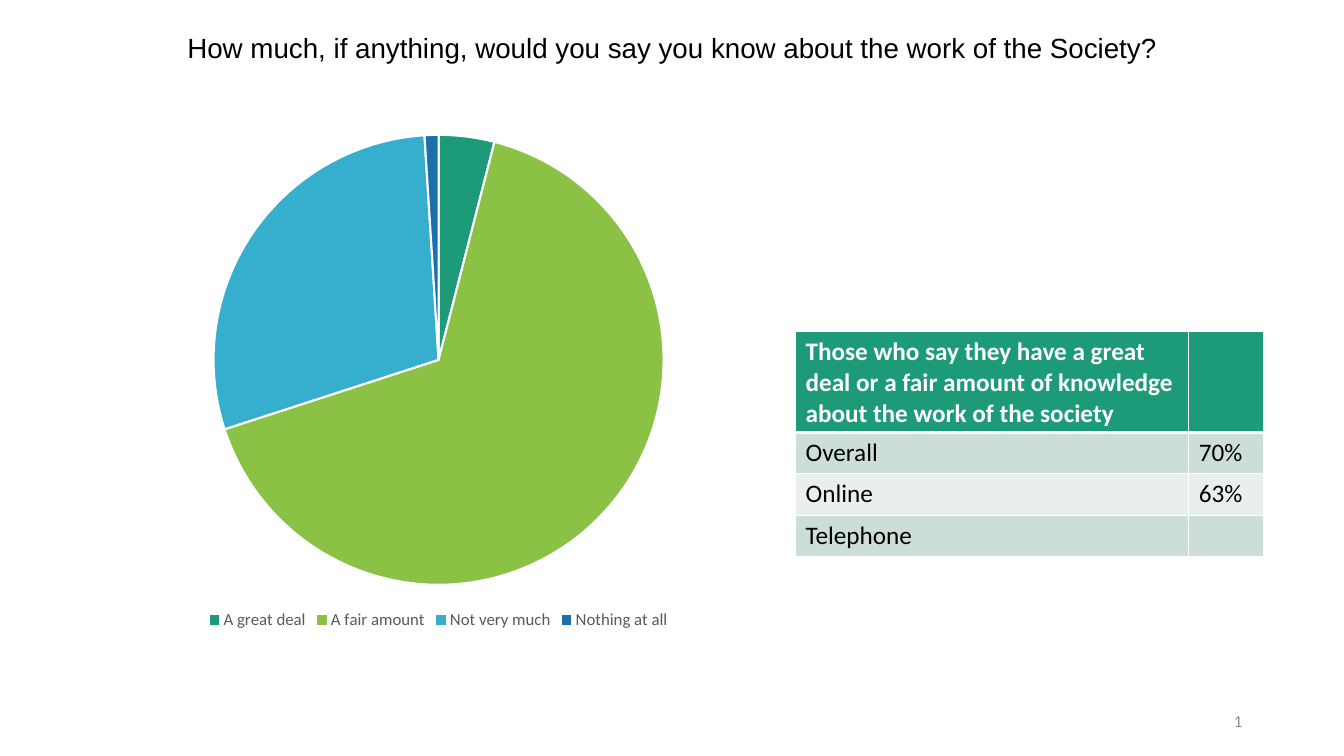
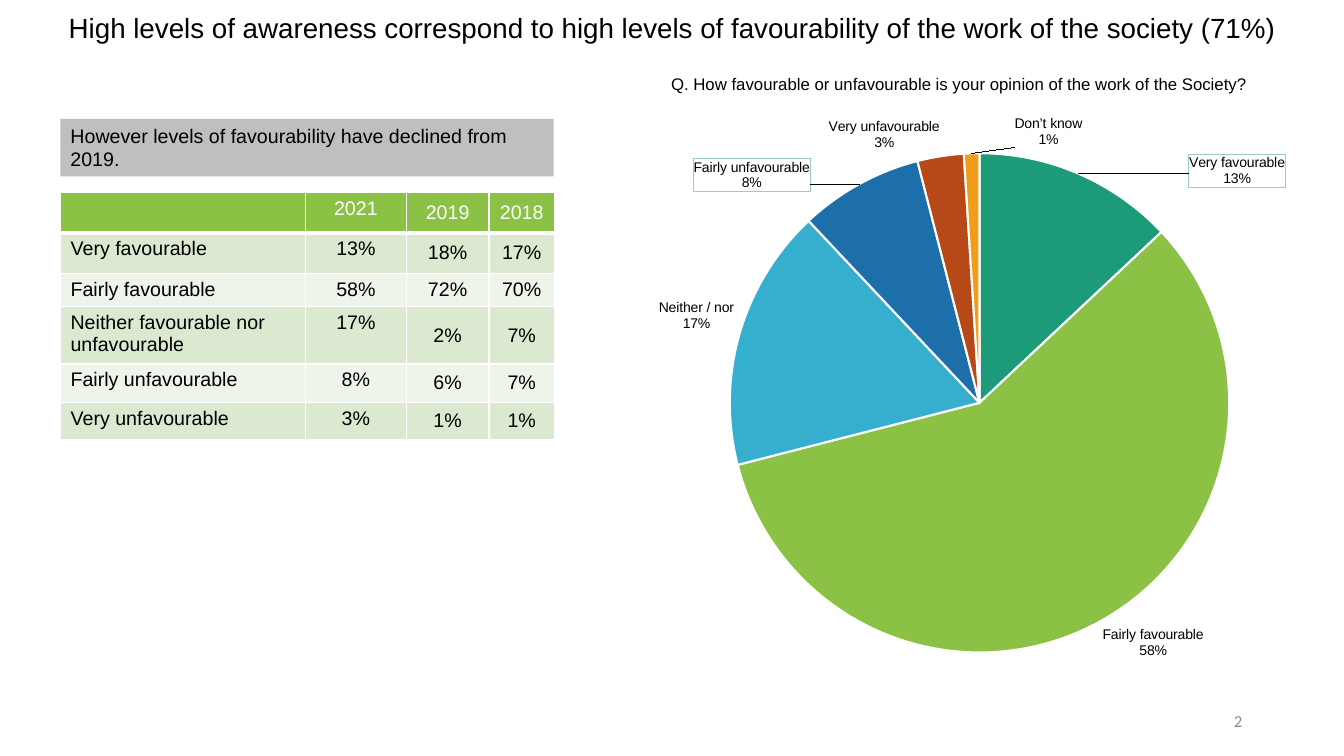
from pptx import Presentation
from pptx.chart.data import CategoryChartData as ChartData
from pptx.dml.color import RGBColor
from pptx.enum.chart import XL_CHART_TYPE as Kind, XL_LABEL_POSITION as Spot, XL_LEGEND_POSITION as Side
from pptx.enum.shapes import MSO_SHAPE as Form
from pptx.enum.text import MSO_ANCHOR as Anchor, MSO_AUTO_SIZE as Fit, PP_ALIGN as Align
from pptx.oxml import parse_xml
from pptx.oxml.ns import qn
from pptx.util import Inches, Pt

BLACK, WHITE, GREY = "000000", "FFFFFF", "BFBFBF"
TEAL, LIME = "1D9A78", "8BC145"
SLICES = [TEAL, LIME, "36AFCE", "1D6FA9", "B74919", "F19D19"]
NS = ('xmlns:a="http://schemas.openxmlformats.org/drawingml/2006/main" '
      'xmlns:c="http://schemas.openxmlformats.org/drawingml/2006/chart"')

KNOW = {
    "title": "How much, if anything, would you say you know about the work of the Society?",
    "pie": [("A great deal", 4), ("A fair amount", 66), ("Not very much", 29), ("Nothing at all", 1)],
    "rows": [
        ("Those who say they have a great deal or a fair amount of knowledge "
         "about the work of the society", ""),
        ("Overall", "70%"),
        ("Online", "63%"),
        ("Telephone", ""),
    ],
}
FAVOUR = {
    "title": "High levels of awareness correspond to high levels of favourability "
             "of the work of the society (71%)",
    "ask": "Q. How favourable or unfavourable is your opinion of the work of the Society?",
    "note": "However levels of favourability have declined from 2019.",
    "pie": [("Very favourable", 13), ("Fairly favourable", 58), ("Neither / nor", 17),
            ("Fairly unfavourable", 8), ("Very unfavourable", 3), ("Don’t know", 1)],
    "shifts": [(0, 0.14, 0.03, "9FCCC0"), (3, -0.06, 0.02, "9FCCC0"), (5, 0.1, 0, None)],
    "rows": [
        ("", "2021", "2019", "2018"),
        ("Very favourable", "13%", "18%", "17%"),
        ("Fairly favourable", "58%", "72%", "70%"),
        ("Neither favourable nor unfavourable", "17%", "2%", "7%"),
        ("Fairly unfavourable", "8%", "6%", "7%"),
        ("Very unfavourable", "3%", "1%", "1%"),
    ],
}


def rgb(code):
    return RGBColor.from_string(code)


def box(*sides):
    return [Inches(side) for side in sides]


def style(font, size, face, color, bold=False):
    font.size, font.name, font.bold = Pt(size), face, bold
    font.color.rgb = rgb(color)


def start(deck, text, height, top=0.05):
    slide = deck.slides.add_slide(deck.slide_layouts[5])
    title = slide.shapes.title
    title.left, title.top, title.width, title.height = box(0, 0, 13.33, height)
    frame = title.text_frame
    frame.text = text
    frame.word_wrap, frame.auto_size = True, Fit.NONE
    frame.vertical_anchor, frame.margin_top = Anchor.MIDDLE, Inches(top)
    para = frame.paragraphs[0]
    para.alignment, para.line_spacing = Align.CENTER, 0.9
    style(para.font, 19.8, "Arial", BLACK)
    return slide


def number(slide, value):
    frame = slide.shapes.add_textbox(*box(9.42, 6.95, 3, 0.4)).text_frame
    frame.word_wrap, frame.vertical_anchor = True, Anchor.MIDDLE
    para = frame.paragraphs[0]
    para.alignment = Align.RIGHT
    style(para.font, 12, "Calibri", "8C8C8C")
    para._p.append(parse_xml(
        f'<a:fld {NS} id="{{B6F15528-21DE-4FAA-801E-634DDDAF4B2B}}" type="slidenum">'
        f'<a:rPr lang="en-GB" sz="1200"><a:solidFill><a:srgbClr val="8C8C8C"/></a:solidFill>'
        f'<a:latin typeface="Calibri"/></a:rPr><a:t>{value}</a:t></a:fld>'))


def pie(slide, place, pairs, size):
    data = ChartData()
    data.categories = [name for name, _ in pairs]
    data.add_series("Series 1", [value for _, value in pairs])
    chart = slide.shapes.add_chart(Kind.PIE, *box(*place), data).chart
    style(chart.font, size, "Calibri", BLACK)
    chart.has_title = chart.has_legend = False
    plot = chart.plots[0]
    plot.vary_by_categories = True
    for index, color in enumerate(SLICES[:len(pairs)]):
        look = plot.series[0].points[index].format
        look.fill.solid()
        look.fill.fore_color.rgb = rgb(color)
        look.line.color.rgb = rgb(WHITE)
        look.line.width = Pt(1.5)
    return chart


def layout(x, y, size=None, inner=False):
    parts = '<c:layoutTarget val="inner"/>' if inner else ""
    if inner or size is None:
        mode = "edge" if inner else "factor"
        parts += f'<c:xMode val="{mode}"/><c:yMode val="{mode}"/>'
    parts += f'<c:x val="{x}"/><c:y val="{y}"/>'
    if size:
        parts += f'<c:w val="{size[0]}"/><c:h val="{size[1]}"/>'
    return f'<c:layout {NS}><c:manualLayout>{parts}</c:manualLayout></c:layout>'


def label(chart, shifts):
    labels = chart.plots[0].series[0].data_labels
    labels.show_category_name = labels.show_percentage = True
    labels.show_value = False
    labels.number_format, labels.number_format_is_linked = "0%", False
    labels.position = Spot.OUTSIDE_END
    style(labels.font, 10, "Arial", BLACK)
    root = labels._element
    root.find(qn("c:showBubbleSize")).addnext(parse_xml(f"<c:separator {NS}>\n</c:separator>"))
    for spot, (index, x, y, edge) in enumerate(shifts):
        line = f'<a:solidFill><a:srgbClr val="{edge}"/></a:solidFill>' if edge else "<a:noFill/>"
        shows = "".join(f'<c:show{name} val="{flag}"/>' for name, flag in (
            ("LegendKey", 0), ("Val", 0), ("CatName", 1), ("SerName", 0),
            ("Percent", 1), ("BubbleSize", 0)))
        root.insert(spot, parse_xml(
            f'<c:dLbl {NS}><c:idx val="{index}"/>{layout(x, y)}'
            f'<c:numFmt formatCode="0%" sourceLinked="0"/>'
            f'<c:spPr><a:noFill/><a:ln w="9525">{line}</a:ln></c:spPr>'
            f'<c:txPr><a:bodyPr/><a:p><a:pPr><a:defRPr sz="1000" b="0"><a:solidFill>'
            f'<a:srgbClr val="{BLACK}"/></a:solidFill><a:latin typeface="Arial"/></a:defRPr></a:pPr>'
            f'<a:endParaRPr lang="en-GB"/></a:p></c:txPr>'
            f'<c:dLblPos val="outEnd"/>{shows}<c:separator>\n</c:separator></c:dLbl>'))


def place(parent, xml, before):
    for old in parent.findall(qn("c:layout")):
        parent.remove(old)
    parent.find(qn(before)).addprevious(parse_xml(xml))


def edge(cell, head):
    props = cell._tc.get_or_add_tcPr()
    for spot, side in enumerate("LRTB"):
        width = Pt(3 if head and side == "B" else 1)
        props.insert(spot, parse_xml(
            f'<a:ln{side} {NS} w="{width}"><a:solidFill><a:srgbClr val="{WHITE}"/>'
            f'</a:solidFill></a:ln{side}>'))


def grid(slide, left, top, rows, cols, heights, fills, font, bold=False, mid=False):
    table = slide.shapes.add_table(
        len(rows), len(cols), *box(left, top, sum(cols), sum(heights))).table
    for col, width in zip(table.columns, cols):
        col.width = Inches(width)
    for r, (row, height) in enumerate(zip(rows, heights)):
        table.rows[r].height = Inches(height)
        head = r == 0
        for c, text in enumerate(row):
            cell = table.cell(r, c)
            cell.text = text
            cell.fill.solid()
            cell.fill.fore_color.rgb = rgb(fills[0] if head else fills[2 - r % 2])
            edge(cell, head)
            para = cell.text_frame.paragraphs[0]
            style(para.font, *font, WHITE if head else BLACK, bold and head)
            if mid and c:
                para.alignment = Align.CENTER
            if mid and c > 1:
                cell.vertical_anchor = Anchor.MIDDLE


def know(deck):
    slide = start(deck, KNOW["title"], 0.73, 0.3)
    chart = pie(slide, (1.07, 1.2, 6.56, 5.09), KNOW["pie"], 10)
    chart.has_legend = True
    chart.legend.position = Side.BOTTOM
    chart.legend.include_in_layout = False
    style(chart.legend.font, 12, "Calibri", "595959")
    number(slide, 3)
    grid(slide, 7.89, 3.29, KNOW["rows"], (3.9, 0.74), (1, 0.41, 0.41, 0.41),
         (TEAL, "CDDED6", "E8EFEC"), (18, "Calibri"), bold=True)


def favour(deck):
    slide = start(deck, FAVOUR["title"], 0.58)
    chart = pie(slide, (5.71, 0.58, 7.63, 6.27), FAVOUR["pie"], 12)
    chart.has_title = True
    title = chart.chart_title
    title.text_frame.text = FAVOUR["ask"]
    style(title.text_frame.paragraphs[0].font, 12, "Arial", BLACK)
    title.include_in_layout = False
    place(title._element, layout(0.12, 0.02, inner=True).replace(
        '<c:layoutTarget val="inner"/>', ""), "c:overlay")
    place(chart._chartSpace.chart.plotArea, layout(0.2, 0.15, (0.65, 0.79), True), "c:pieChart")
    label(chart, FAVOUR["shifts"])
    number(slide, 4)
    grid(slide, 0.6, 1.91, FAVOUR["rows"], (2.43, 1, 0.82, 0.65),
         (0.4, 0.4, 0.32, 0.53, 0.38, 0.37), (LIME, "DAE9CF", "EEF4E9"), (14, "Arial"), mid=True)
    note = slide.shapes.add_shape(Form.RECTANGLE, *box(0.6, 1.18, 4.89, 0.57))
    note.shadow.inherit = False
    note.fill.solid()
    note.fill.fore_color.rgb = rgb(GREY)
    note.line.fill.background()
    frame = note.text_frame
    frame.text = FAVOUR["note"]
    frame.word_wrap, frame.vertical_anchor = True, Anchor.TOP
    frame.paragraphs[0].alignment = Align.LEFT
    style(frame.paragraphs[0].font, 14, "Arial", BLACK)


def main():
    deck = Presentation()
    deck.slide_width, deck.slide_height = box(13.33, 7.5)
    know(deck)
    favour(deck)
    deck.save("out.pptx")


if __name__ == "__main__":
    main()
